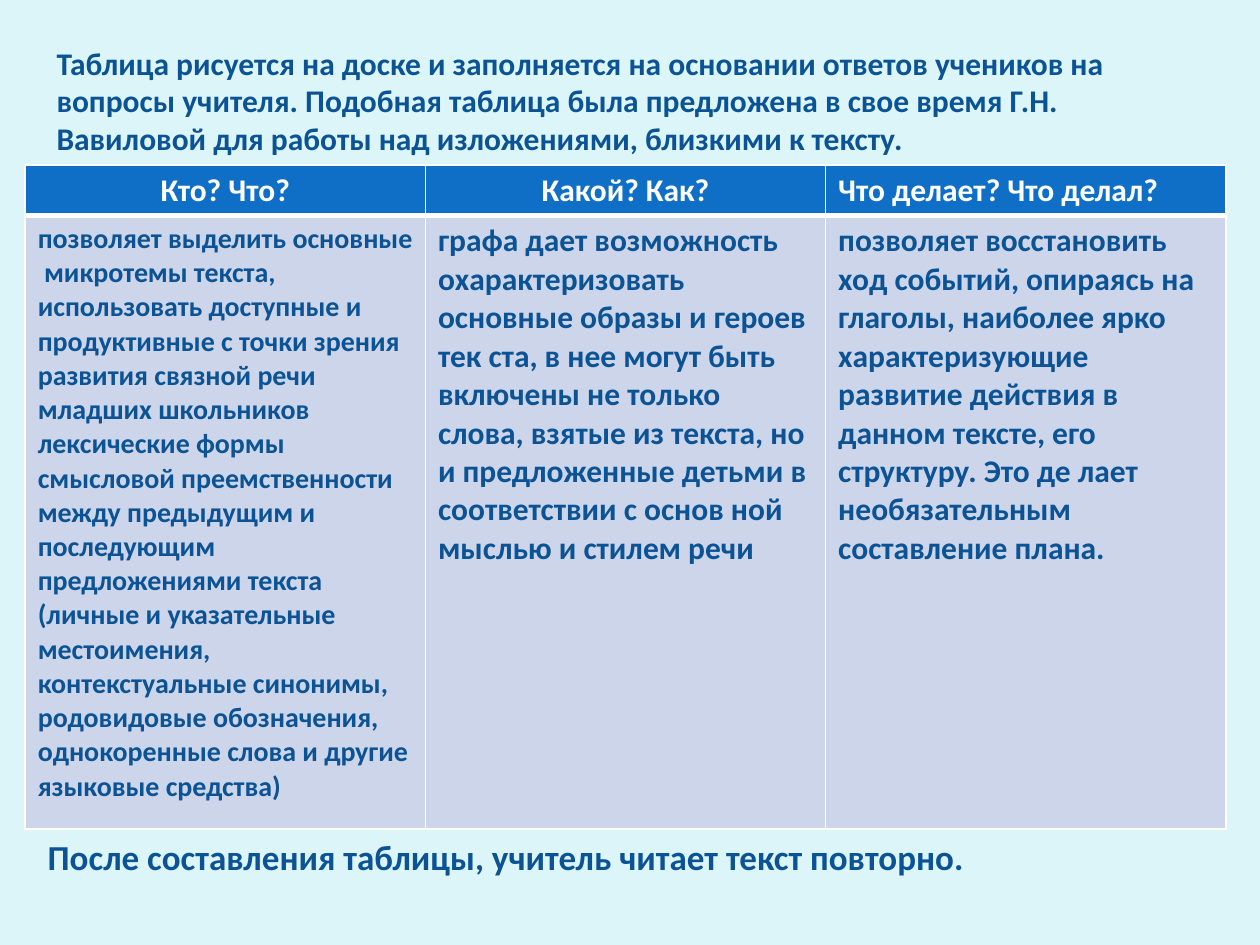
import pptx
import pptx.util
import pptx.dml.color
import pptx.enum.text
import pptx.oxml.ns
from lxml import etree
from pptx.util import Inches

BLUE, WHITE = "0B5394", "FFFFFF"
HEADER_FILL, BODY_FILL, PAGE_FILL = "0F6FC6", "CCD5EA", "DBF5F9"
LEFT = pptx.enum.text.PP_ALIGN.LEFT
CENTER = pptx.enum.text.PP_ALIGN.CENTER
TOP = pptx.enum.text.MSO_ANCHOR.TOP
MIDDLE = pptx.enum.text.MSO_ANCHOR.MIDDLE

INTRO = (
    "Таблица рисуется на доске и заполняется на основании ответов учеников на "
    "вопросы учителя. Подобная таблица была предложена в свое время Г.Н. "
    "Вавиловой для работы над изложениями, близкими к тексту."
)
CLOSING = "После составления таблицы, учитель читает текст повторно."

# heading, heading alignment, body, body size
COLUMNS = [
    ("Кто? Что?", CENTER,
     "позволяет выделить основные  микротемы текста, использовать доступные и "
     "продуктивные с точки зрения развития связной речи младших школьников "
     "лексические формы смысловой преемственности между предыдущим и последующим "
     "предложениями текста (личные и указательные местоимения, контекстуальные "
     "синонимы, родовидовые обозначения, однокоренные слова и другие языковые "
     "средства)", 16),
    ("Какой? Как?", CENTER,
     "графа дает возможность охарактеризовать основные образы и героев тек ста, "
     "в нее могут быть включены не только слова, взятые из текста, но и "
     "предложенные детьми в соответствии с основ ной мыслью и стилем речи", 18),
    ("Что делает? Что делал?", LEFT,
     "позволяет восстановить ход событий, опираясь на глаголы, наиболее ярко "
     "характеризующие развитие действия в данном тексте, его структуру. Это де "
     "лает необязательным составление плана.", 18),
]


def color(value):
    return pptx.dml.color.RGBColor.from_string(value)


def paint(fill, value):
    fill.solid()
    fill.fore_color.rgb = color(value)


def write(frame, text, size, value, align=LEFT):
    frame.text = text
    para = frame.paragraphs[0]
    para.alignment = align
    font = para.runs[0].font
    font.name = "Calibri"
    font.size = pptx.util.Pt(size)
    font.bold = True
    font.color.rgb = color(value)


def add_text(page, left, top, width, height, text, size, anchor):
    box = page.shapes.add_textbox(
        Inches(left), Inches(top), Inches(width), Inches(height))
    frame = box.text_frame
    frame.word_wrap = True
    frame.vertical_anchor = anchor
    write(frame, text, size, BLUE)


def add_borders(cell, **widths):
    """Draw white cell borders; widths in points are keyed by L, R, T, B."""
    properties = cell._tc.get_or_add_tcPr()
    qn = pptx.oxml.ns.qn
    for side, width in widths.items():
        line = etree.SubElement(
            properties, qn("a:ln" + side), w=str(pptx.util.Pt(width)))
        fill = etree.SubElement(line, qn("a:solidFill"))
        etree.SubElement(fill, qn("a:srgbClr"), val=WHITE)


def fill_cell(cell, text, size, value, background, align, top, bottom):
    write(cell.text_frame, text, size, value, align)
    add_borders(cell, L=1, R=1, T=top, B=bottom)
    paint(cell.fill, background)


def add_questions_table(page):
    row_heights = (0.4, 4.87)
    table = page.shapes.add_table(
        2, len(COLUMNS), Inches(0.2), Inches(1.31),
        Inches(9.53), Inches(sum(row_heights))).table
    for row, height in zip(table.rows, row_heights):
        row.height = Inches(height)
    for index, (heading, align, body, size) in enumerate(COLUMNS):
        fill_cell(table.cell(0, index), heading, 18, WHITE, HEADER_FILL, align, 1, 3)
        fill_cell(table.cell(1, index), body, size, BLUE, BODY_FILL, LEFT, 3, 1)


def main():
    deck = pptx.Presentation()
    deck.slide_width, deck.slide_height = Inches(10), Inches(7.5)
    page = deck.slides.add_slide(deck.slide_layouts[6])
    paint(page.background.fill, PAGE_FILL)
    add_text(page, 0.35, 0.29, 9.29, 1.01, INTRO, 18, MIDDLE)
    add_questions_table(page)
    add_text(page, 0.28, 6.58, 9.29, 0.44, CLOSING, 20, TOP)
    deck.save("out.pptx")


if __name__ == "__main__":
    main()
